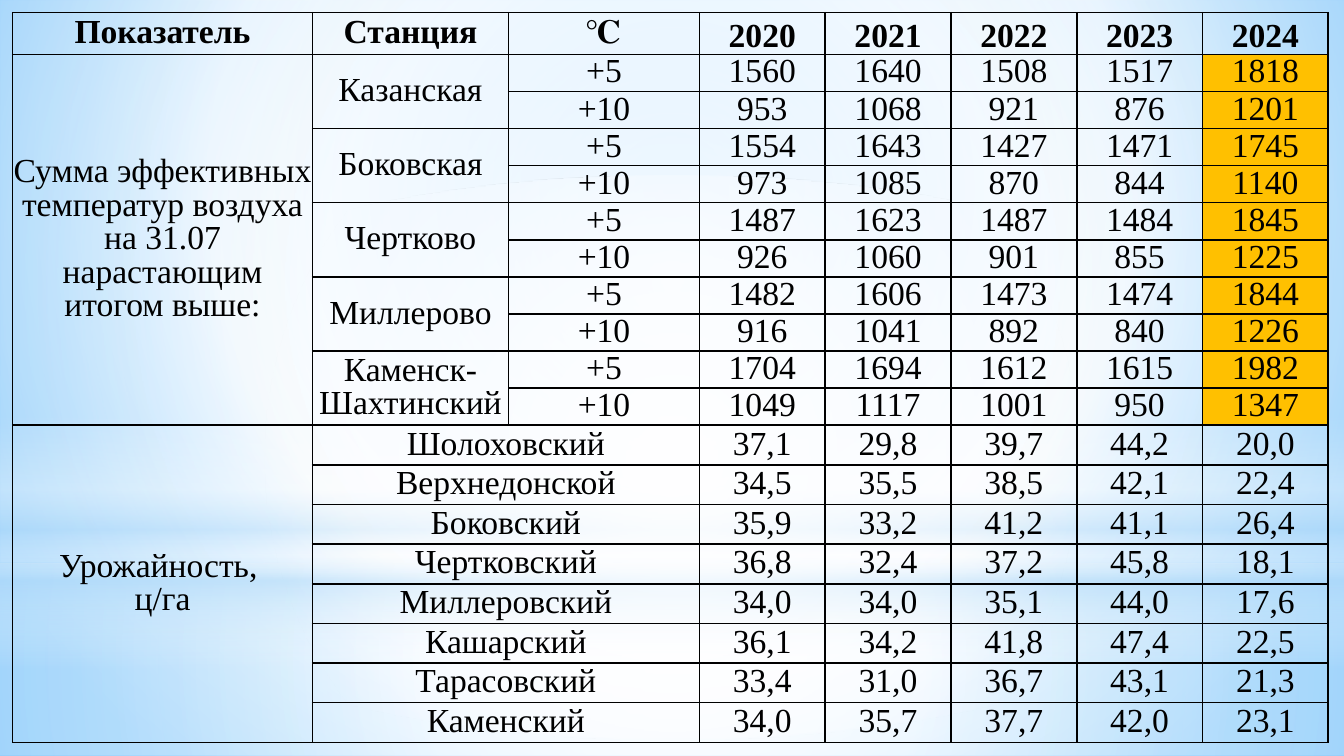
from typing import NamedTuple, Optional

from lxml import etree
from pptx import Presentation, util as u
from pptx.dml.color import RGBColor
from pptx.enum import shapes, text
from pptx.oxml.ns import qn

WIDTH = u.Inches(10)
HEIGHT = WIDTH * 9 // 16
MARGIN = u.Pt(6.8)
FONT, SIZE = "Times New Roman", u.Pt(18)
BLACK, AMBER = "000000", "FFC000"
WHITE, SKY = "FFFFFF", "B4DCFA"
A = "http://schemas.openxmlformats.org/drawingml/2006/main"


class Stop(NamedTuple):
    pos: int
    color: str
    alpha: int = 100


class Gradient(NamedTuple):
    """A radial gradient towards focus (left, top, right, bottom), or a linear one at angle."""
    stops: list[Stop]
    focus: tuple[int, int, int, int] = (50, 50, 50, 50)
    angle: Optional[int] = None


class Glow(NamedTuple):
    """A full-width background shape; top and height are in percent of the slide height."""
    top: float
    height: float
    gradient: Gradient
    outline: shapes.MSO_SHAPE = shapes.MSO_SHAPE.RECTANGLE


class Station(NamedTuple):
    name: str
    above_5: str
    above_10: str


BACKDROP = Gradient([Stop(0, "9ED5FF"), Stop(60, WHITE), Stop(100, "5BB9FF")], (20, 10, 20, 60))
GLOWS = [
    Glow(74.5, 25.5, Gradient([Stop(0, WHITE, 91), Stop(37, WHITE, 76), Stop(100, SKY, 79)])),
    Glow(0, 74.5, Gradient([Stop(0, WHITE, 89), Stop(48, WHITE, 62), Stop(100, SKY, 79)])),
    Glow(55, 33.4, Gradient([Stop(0, WHITE, 0), Stop(29, WHITE, 30), Stop(45, SKY, 40),
                             Stop(55, WHITE, 26), Stop(65, SKY, 60), Stop(100, WHITE, 0)],
                            angle=90)),
    Glow(23.3, 74.5, Gradient([Stop(0, WHITE), Stop(56, WHITE, 0)]), shapes.MSO_SHAPE.OVAL),
]

HEADER = ["Показатель", "Станция", "℃", "2020", "2021", "2022", "2023", "2024"]
HEAT_TITLE = "Сумма эффективных температур воздуха на 31.07 нарастающим итогом выше:"
STATIONS = [
    Station("Казанская", "1560 1640 1508 1517 1818", "953 1068 921 876 1201"),
    Station("Боковская", "1554 1643 1427 1471 1745", "973 1085 870 844 1140"),
    Station("Чертково", "1487 1623 1487 1484 1845", "926 1060 901 855 1225"),
    Station("Миллерово", "1482 1606 1473 1474 1844", "916 1041 892 840 1226"),
    Station("Каменск-Шахтинский", "1704 1694 1612 1615 1982", "1049 1117 1001 950 1347"),
]
YIELD_TITLE = "Урожайность, \nц/га"
YIELDS = {
    "Шолоховский": "37,1 29,8 39,7 44,2 20,0",
    "Верхнедонской": "34,5 35,5 38,5 42,1 22,4",
    "Боковский": "35,9 33,2 41,2 41,1 26,4",
    "Чертковский": "36,8 32,4 37,2 45,8 18,1",
    "Миллеровский": "34,0 34,0 35,1 44,0 17,6",
    "Кашарский": "36,1 34,2 41,8 47,4 22,5",
    "Тарасовский": "33,4 31,0 36,7 43,1 21,3",
    "Каменский": "34,0 35,7 37,7 42,0 23,1",
}
YEAR_COL = 3
YEARS = len(HEADER) - YEAR_COL
HEAT_ROWS = 2 * len(STATIONS)
YIELD_ROW = 1 + HEAT_ROWS
COL_WIDTHS = [2.23, 1.46, 1.42] + [4.68 / YEARS] * YEARS
ROW_HEIGHTS = [0.31] + [2.76 / HEAT_ROWS] * HEAT_ROWS + [2.36 / len(YIELDS)] * len(YIELDS)


def rgb(color: str) -> RGBColor:
    return RGBColor.from_string(color)


def gradient_element(gradient: Gradient):
    stops = "".join(
        f'<a:gs pos="{stop.pos * 1000}"><a:srgbClr val="{stop.color}">'
        f'<a:alpha val="{stop.alpha * 1000}"/></a:srgbClr></a:gs>' for stop in gradient.stops)
    if gradient.angle is None:
        left, top, right, bottom = (share * 1000 for share in gradient.focus)
        shade = (f'<a:path path="circle"><a:fillToRect l="{left}" t="{top}" '
                 f'r="{right}" b="{bottom}"/></a:path>')
    else:
        shade = f'<a:lin ang="{gradient.angle * 60000}" scaled="0"/>'
    return etree.fromstring(f'<a:gradFill xmlns:a="{A}" rotWithShape="1">'
                            f'<a:gsLst>{stops}</a:gsLst>{shade}</a:gradFill>')


def set_gradient(owner, fill, gradient: Gradient) -> None:
    """Put the gradient in the place of the owner's emptied fill."""
    fill.background()
    empty = owner.find(f".//{qn('a:noFill')}")
    empty.getparent().replace(empty, gradient_element(gradient))


def add_glow(s, glow: Glow) -> None:
    sp = s.shapes.add_shape(glow.outline, 0, int(glow.top * HEIGHT / 100), WIDTH,
                            int(glow.height * HEIGHT / 100))
    sp.shadow.inherit = False
    set_gradient(sp.element, sp.fill, glow.gradient)
    sp.line.fill.background()


def style_cell(cell, row: int, col: int) -> None:
    """Give the cell thin black borders, its fill and its text format."""
    properties = cell._tc.get_or_add_tcPr()
    for side in ("lnL", "lnR", "lnT", "lnB"):
        properties.append(etree.fromstring(
            f'<a:{side} xmlns:a="{A}" w="12700"><a:solidFill><a:srgbClr val="{BLACK}"/>'
            f'</a:solidFill></a:{side}>'))
    if 0 < row < YIELD_ROW and col == len(HEADER) - 1:
        cell.fill.solid()
        cell.fill.fore_color.rgb = rgb(AMBER)
    else:
        cell.fill.background()
    cell.margin_left = cell.margin_right = cell.margin_top = cell.margin_bottom = 0
    bottom = row == 0 and col >= YEAR_COL
    cell.vertical_anchor = text.MSO_ANCHOR.BOTTOM if bottom else text.MSO_ANCHOR.MIDDLE
    for p in cell.text_frame.paragraphs:
        p.alignment = text.PP_ALIGN.CENTER
        p.line_spacing = 0.9
        p.font.name, p.font.size, p.font.bold = FONT, SIZE, row == 0
        p.font.color.rgb = rgb(BLACK)


def write_row(table, row: int, first_col: int, values: list[str]) -> None:
    for col, value in enumerate(values, first_col):
        table.cell(row, col).text = value


def write_merged(table, row: int, col: int, rows: int, cols: int, value: str) -> None:
    cell = table.cell(row, col)
    cell.merge(table.cell(row + rows - 1, col + cols - 1))
    cell.text = value


def add_weather_table(s) -> None:
    frame = s.shapes.add_table(len(ROW_HEIGHTS), len(COL_WIDTHS), MARGIN, MARGIN,
                               u.Inches(sum(COL_WIDTHS)), u.Inches(sum(ROW_HEIGHTS)))
    table = frame.table
    table.first_row = table.horz_banding = False
    for column, width in zip(table.columns, COL_WIDTHS):
        column.width = u.Inches(width)
    for line, height in zip(table.rows, ROW_HEIGHTS):
        line.height = u.Inches(height)

    write_row(table, 0, 0, HEADER)
    write_merged(table, 1, 0, HEAT_ROWS, 1, HEAT_TITLE)
    for i, station in enumerate(STATIONS):
        row = 1 + 2 * i
        write_merged(table, row, 1, 2, 1, station.name)
        write_row(table, row, 2, ["+5", *station.above_5.split()])
        write_row(table, row + 1, 2, ["+10", *station.above_10.split()])
    write_merged(table, YIELD_ROW, 0, len(YIELDS), 1, YIELD_TITLE)
    for row, (district, values) in enumerate(YIELDS.items(), YIELD_ROW):
        write_merged(table, row, 1, 1, 2, district)
        write_row(table, row, YEAR_COL, values.split())

    for row in range(len(ROW_HEIGHTS)):
        for col in range(len(COL_WIDTHS)):
            style_cell(table.cell(row, col), row, col)


def main() -> None:
    prs = Presentation()
    prs.slide_width, prs.slide_height = WIDTH, HEIGHT
    s = prs.slides.add_slide(prs.slide_layouts[6])
    set_gradient(s.element, s.background.fill, BACKDROP)
    for glow in GLOWS:
        add_glow(s, glow)
    add_weather_table(s)
    prs.save("out.pptx")


if __name__ == "__main__":
    main()
